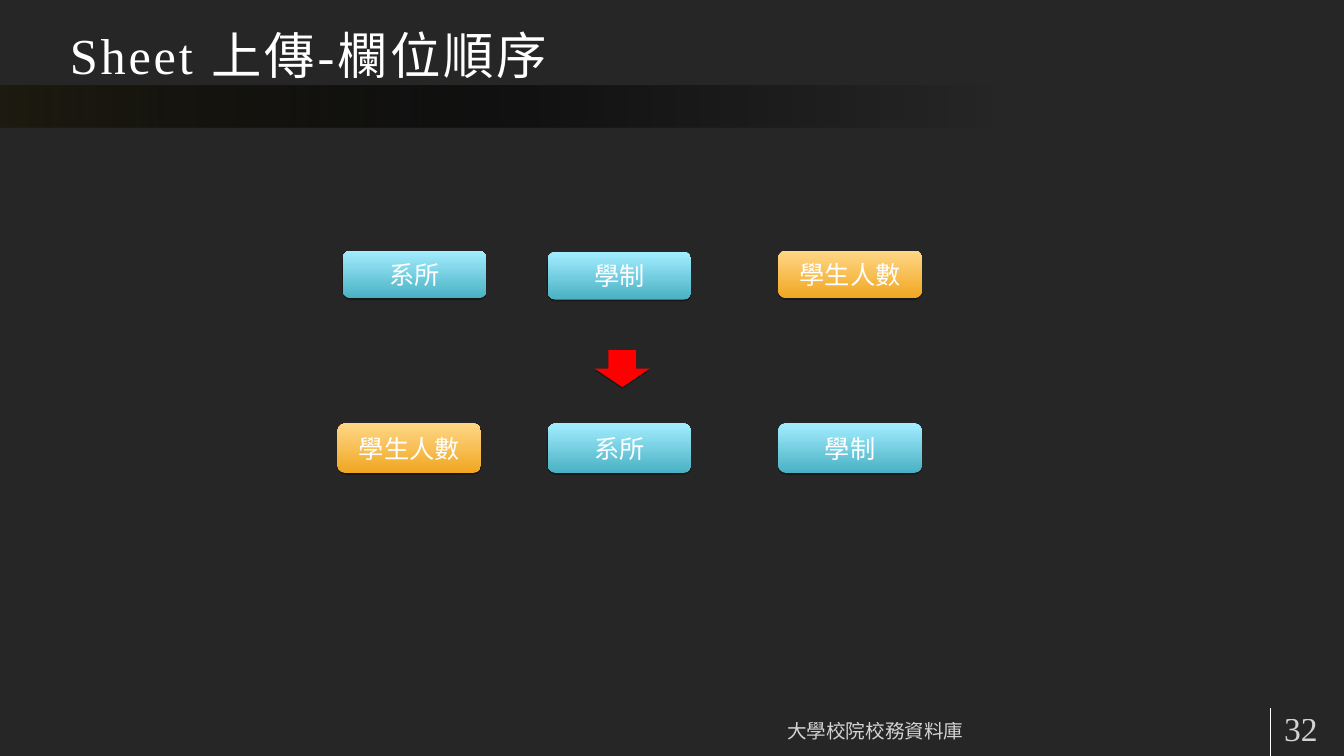
from dataclasses import dataclass

from lxml.etree import SubElement
from pptx import Presentation
from pptx.dml.color import RGBColor
from pptx.enum.shapes import MSO_CONNECTOR, MSO_SHAPE
from pptx.enum.text import MSO_ANCHOR, PP_ALIGN
from pptx.oxml import parse_xml
from pptx.oxml.ns import nsdecls, qn
from pptx.util import Inches, Pt


@dataclass(frozen=True)
class Theme:
    background: str = "262626"
    white: str = "FFFFFF"
    arrow: str = "FF0000"
    # Gradient stops: position, colour, opacity (all in percent)
    band: tuple = ((0, "1E1C11", 100), (39, "000000", 54), (74, "000000", 0))
    blue: tuple = ((0, "49B1C3", 100), (100, "A2EDFF", 100))
    orange: tuple = ((0, "F0A621", 100), (100, "FFD786", 100))
    title_size: int = 54
    field_size: int = 27
    footer_size: int = 21
    number_size: int = 36
    text_font: str = "Times New Roman"
    field_font: str = "Noto Sans CJK SC"


theme = Theme()


def fill_gradient(shape, stops, angle):
    """Fill with a linear gradient; the angle runs clockwise in degrees."""
    stop_xml = "".join(
        f'<a:gs pos="{position * 1000}"><a:srgbClr val="{colour}">'
        f'<a:alpha val="{opacity * 1000}"/></a:srgbClr></a:gs>'
        for position, colour, opacity in stops)
    gradient = parse_xml(
        f'<a:gradFill {nsdecls("a")} rotWithShape="1"><a:gsLst>{stop_xml}</a:gsLst>'
        f'<a:lin ang="{angle * 60000}" scaled="0"/></a:gradFill>')
    shape._element.spPr.find(qn("a:prstGeom")).addnext(gradient)


def add_drop_shadow(shape):
    shape.shadow.inherit = False
    effects = shape._element.spPr.find(qn("a:effectLst"))
    effects.append(parse_xml(
        f'<a:outerShdw {nsdecls("a")} blurRad="0" dist="{Pt(1.8)}" dir="5400000" '
        'rotWithShape="0"><a:srgbClr val="000000"><a:alpha val="35000"/>'
        '</a:srgbClr></a:outerShdw>'))


deck = Presentation()
deck.slide_width, deck.slide_height = Inches(20), Inches(11.25)
page = deck.slides.add_slide(deck.slide_layouts[6])
page.background.fill.solid()
page.background.fill.fore_color.rgb = RGBColor.from_string(theme.background)

# Title band and footer divider
band = page.shapes.add_shape(
    MSO_SHAPE.RECTANGLE, 0, Inches(1.27), Inches(20), Inches(0.63))
band.shadow.inherit = False
band.line.fill.background()
fill_gradient(band, theme.band, 0)

divider = page.shapes.add_connector(
    MSO_CONNECTOR.STRAIGHT, Inches(18.9), Inches(10.54), Inches(18.9), Inches(11.25))
divider.line.color.rgb = RGBColor.from_string(theme.white)
divider.line.width = Pt(0.75)
SubElement(divider._element.spPr, qn("a:effectLst"))

# Title, footer and page number: text, place, size, anchor, alignment, opacity, spacing
texts = [
    ("Sheet 上傳-欄位順序", (0.86, 0, 18, 1.35), theme.title_size,
     MSO_ANCHOR.BOTTOM, PP_ALIGN.LEFT, 100, 3),
    ("大學校院校務資料庫", (7.16, 10.54, 11.73, 0.6), theme.footer_size,
     MSO_ANCHOR.BOTTOM, PP_ALIGN.CENTER, 80, 0),
    ("32", (18.93, 10.54, 1.15, 0.6), theme.number_size,
     MSO_ANCHOR.MIDDLE, PP_ALIGN.LEFT, 80, 0),
]
for text, place, size, anchor, alignment, opacity, spacing in texts:
    box = page.shapes.add_textbox(*map(Inches, place))
    frame = box.text_frame
    frame.word_wrap = True
    frame.vertical_anchor = anchor
    frame.margin_left = frame.margin_right = Inches(0.18)
    frame.margin_top = frame.margin_bottom = Inches(0.09)
    frame.text = text
    para = frame.paragraphs[0]
    para.alignment = alignment
    span = para.runs[0]
    span.font.size = Pt(size)
    span.font.name = theme.text_font
    span.font.color.rgb = RGBColor.from_string(theme.white)
    properties = span.font._element
    properties.set("spc", str(spacing * 100))
    colour = properties.find(qn("a:solidFill")).find(qn("a:srgbClr"))
    SubElement(colour, qn("a:alpha"), val=str(opacity * 1000))

# Field order before and after: label, gradient, left, top, height
fields = [
    ("系所", theme.blue, 5.1, 3.73, 0.71),
    ("學制", theme.blue, 8.15, 3.75, 0.71),
    ("學生人數", theme.orange, 11.58, 3.73, 0.71),
    ("學生人數", theme.orange, 5.02, 6.3, 0.74),
    ("系所", theme.blue, 8.15, 6.3, 0.74),
    ("學制", theme.blue, 11.58, 6.3, 0.74),
]
for label, stops, left, top, height in fields:
    field = page.shapes.add_shape(
        MSO_SHAPE.ROUNDED_RECTANGLE,
        Inches(left), Inches(top), Inches(2.14), Inches(height))
    field.line.fill.background()
    fill_gradient(field, stops, 270)
    add_drop_shadow(field)
    frame = field.text_frame
    frame.word_wrap = True
    frame.vertical_anchor = MSO_ANCHOR.MIDDLE
    frame.margin_left = frame.margin_right = Inches(0.07)
    frame.margin_top = frame.margin_bottom = Inches(0.04)
    frame.text = label
    para = frame.paragraphs[0]
    para.alignment = PP_ALIGN.CENTER
    span = para.runs[0]
    span.font.size = Pt(theme.field_size)
    span.font.color.rgb = RGBColor.from_string(theme.white)
    span.font.name = theme.field_font
    SubElement(span.font._element, qn("a:ea"), typeface=theme.field_font)

arrow = page.shapes.add_shape(
    MSO_SHAPE.DOWN_ARROW, Inches(8.85), Inches(5.21), Inches(0.82), Inches(0.55))
arrow.fill.solid()
arrow.fill.fore_color.rgb = RGBColor.from_string(theme.arrow)
arrow.line.fill.background()
add_drop_shadow(arrow)

deck.save("out.pptx")
